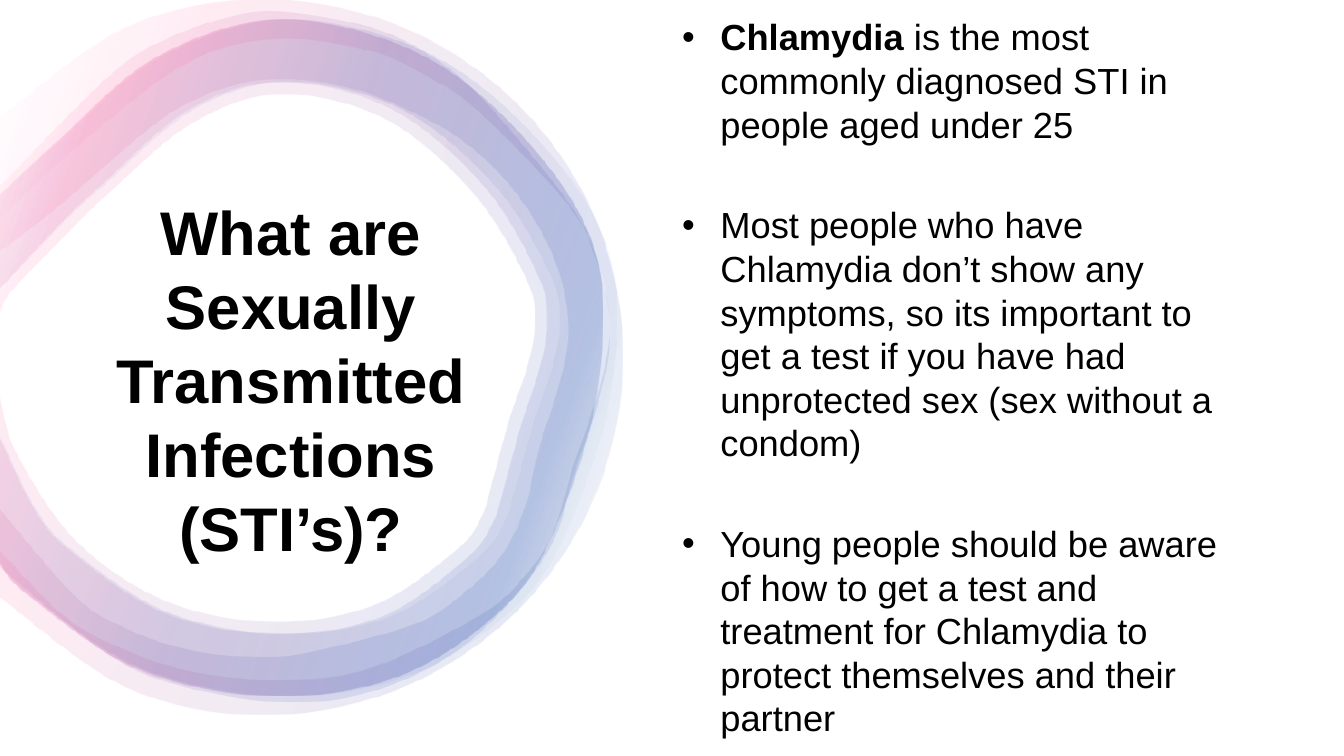
from dataclasses import dataclass
from lxml.etree import SubElement
from pptx import Presentation
from pptx.dml.color import RGBColor
from pptx.enum.text import MSO_ANCHOR, MSO_AUTO_SIZE, PP_ALIGN
from pptx.oxml import parse_xml
from pptx.oxml.ns import nsdecls, qn
from pptx.util import Inches, Pt


@dataclass(frozen=True)
class Theme:
    font: str = "Arial"
    ink: str = "000000"
    paper: str = "FFFFFF"
    blue: str = "00349E"
    pink: str = "FF388C"
    alpha: int = 10
    tilt: int = 200
    head: float = 44
    head_line: float = 52.9
    text: float = 25.9
    text_line: float = 31.1
    gap: float = 41


THEME = Theme()
WIDTH, HEIGHT = 13.33, 7.5

# Boxes as shares of the slide: left, top, width, height
RING_BOX = (0, 0, 0.463, 0.945)
TITLE_BOX = (0.066, 0.3, 0.301, 0.403)
BODY_BOX = (0.5, 0.117, 0.435, 0.763)

TITLE = "What are Sexually Transmitted Infections (STI’s)?"
# Each point: bold lead, then the rest
POINTS = [
    ("Chlamydia", " is the most commonly diagnosed STI in people aged under 25"),
    ("", "Most people who have Chlamydia don’t show any symptoms, so its important "
         "to get a test if you have had unprotected sex (sex without a condom)"),
    ("", "Young people should be aware of how to get a test and treatment for "
         "Chlamydia to protect themselves and their partner"),
]

# Knots of the ring's edges, on a design area of RING_W by RING_H.
# Outer edges run clockwise from the left side, inner edges run back.
RING_W, RING_H = 6.17, 7.09
WAVE_OUT = [
    (0, 1.85), (1.08, .76), (1.65, .39), (2.33, .16), (2.87, .13), (3.72, .29),
    (4.33, .6), (4.83, 1.04), (5.65, 2.04), (5.93, 2.64), (6.04, 3.3),
    (5.93, 3.97), (5.69, 4.68), (5.48, 5.36), (5.04, 5.98), (4.42, 6.52),
    (3.65, 6.86), (2.83, 6.96), (1.85, 6.81), (1.1, 6.5), (0, 5.62)]
WAVE_IN = [
    (0, 5.04), (.75, 5.91), (1.24, 6.22), (1.8, 6.42), (2.38, 6.5),
    (2.96, 6.48), (4.06, 6.2), (4.55, 5.91), (4.96, 5.51), (5.2, 5.02),
    (5.34, 4.43), (5.53, 3.83), (5.63, 3.3), (5.55, 2.75), (5.32, 2.23),
    (4.98, 1.76), (4.54, 1.37), (4.03, 1.09), (3.52, .89), (2.98, .8),
    (2.45, .82), (1.96, .98), (1.49, 1.27), (.57, 2.06), (0, 2.5)]
BEAN_OUT = [
    (0, 1.93), (.58, 1.4), (1.59, .56), (2.85, .19), (4.27, .54), (5.37, 1.43),
    (6.04, 2.53), (6.05, 3.87), (5.66, 5.15), (5.14, 5.98), (4.09, 6.68),
    (2.78, 6.9), (1.4, 6.63), (.28, 5.89), (0, 5.58)]
BEAN_IN = [
    (0, 4.33), (.35, 5.04), (.72, 5.46), (1.66, 6.07), (2.78, 6.28),
    (3.86, 6.11), (4.7, 5.55), (4.99, 5.18), (5.13, 4.73), (5.28, 4.2),
    (5.46, 3.66), (5.54, 3.21), (5.45, 2.73), (4.9, 1.84), (3.97, 1.08),
    (2.85, .81), (1.92, 1.08), (1.02, 1.84), (.63, 2.2), (0, 2.86)]
SLIM_IN = [
    (0, 3.9), (.17, 4.49), (.77, 5.37), (1.66, 5.96), (2.71, 6.16),
    (3.71, 5.99), (4.5, 5.46), (4.76, 5.13), (4.89, 4.7), (5.04, 4.15),
    (5.22, 3.62), (5.29, 3.2), (5.21, 2.77), (4.69, 1.92), (3.82, 1.18),
    (2.78, .93), (1.9, 1.22), (1.07, 1.92), (.69, 2.29), (.12, 2.88), (0, 3.12)]
DISC_OUT = [
    (0, 1.17), (1.26, .27), (2.62, 0), (3.98, .27), (5.13, 1.04), (5.9, 2.18),
    (6.17, 3.54), (5.9, 4.9), (5.13, 6.05), (3.98, 6.82), (2.62, 7.09),
    (1.26, 6.82), (0, 5.92)]
DISC_IN = [
    (0, 5.46), (.64, 6.11), (1.19, 6.42), (1.86, 6.65), (2.72, 6.74),
    (3.65, 6.63), (4.77, 6.09), (5.23, 5.67), (5.48, 5.27), (5.67, 4.64),
    (5.93, 3.86), (6.04, 3.23), (5.91, 2.6), (5.62, 2.03), (4.74, 1.11),
    (4.23, .76), (3.67, .51), (2.76, .39), (1.89, .61), (.89, 1.35), (0, 2.17)]


def squeeze(knots):
    return [(x * 0.977, y) for x, y in knots]


def fade(pink):
    """Stops from white over blue and pink to white."""
    return [(2, THEME.paper), (16, THEME.blue), (pink, THEME.pink), (100, THEME.paper)]


BANDS = [
    (WAVE_OUT, WAVE_IN, [(37, THEME.blue), (85, THEME.pink), (100, THEME.paper)]),
    (BEAN_OUT, BEAN_IN, [(2, THEME.paper), (54, THEME.blue), (100, THEME.paper)]),
    (squeeze(BEAN_OUT), SLIM_IN, fade(85)),
    (squeeze(BEAN_OUT), squeeze(BEAN_IN), fade(85)),
    (DISC_OUT, DISC_IN, fade(74)),
]


def frame(box):
    left, top, wide, high = box
    return (Inches(left * WIDTH), Inches(top * HEIGHT),
            Inches(wide * WIDTH), Inches(high * HEIGHT))


def bend(shape, edges):
    """Turn the straight steps along each edge into smooth curves."""
    steps = iter(list(shape._element.iter(qn("a:lnTo"))))
    for turn, knots in enumerate(edges):
        if turn:
            next(steps)  # straight join between the edges
        ends = [knots[0], *knots, knots[-1]]
        for a, b, c, d in zip(ends, ends[1:], ends[2:], ends[3:]):
            step = next(steps)
            step.tag = qn("a:cubicBezTo")
            pulls = [[q + (r - p) / 6 for p, q, r in zip(a, b, c)],
                     [r - (s - q) / 6 for q, r, s in zip(b, c, d)]]
            for i, (x, y) in enumerate(pulls):
                x, y = round(x - shape.left), round(y - shape.top)
                step.insert(i, parse_xml(f'<a:pt {nsdecls("a")} x="{x}" y="{y}"/>'))


def tint(shape, stops):
    """Fill a shape with a see-through linear gradient."""
    marks = "".join(
        f'<a:gs pos="{pos * 1000}"><a:srgbClr val="{color}">'
        f'<a:alpha val="{THEME.alpha * 1000}"/></a:srgbClr></a:gs>'
        for pos, color in stops)
    grad = parse_xml(
        f'<a:gradFill {nsdecls("a")} rotWithShape="1"><a:gsLst>{marks}</a:gsLst>'
        f'<a:lin ang="{THEME.tilt * 60000}" scaled="0"/></a:gradFill>')
    shape._element.spPr.find(qn("a:custGeom")).addnext(grad)


def draw_ring(slide, box):
    left, top, wide, high = frame(box)
    for outer, inner, stops in BANDS:
        edges = [[(left + x * wide / RING_W, top + y * high / RING_H)
                  for x, y in knots] for knots in (outer, inner)]
        first, *rest = edges[0] + edges[1]
        pen = slide.shapes.build_freeform(*first)
        pen.add_line_segments(rest, close=True)
        band = pen.convert_to_shape()
        bend(band, edges)
        band.shadow.inherit = False
        band.line.fill.background()
        tint(band, stops)


def place(holder, box):
    holder.left, holder.top, holder.width, holder.height = frame(box)
    text = holder.text_frame
    text.word_wrap = True
    text.auto_size = MSO_AUTO_SIZE.NONE
    text.vertical_anchor = MSO_ANCHOR.MIDDLE
    return text


def style(para, size, line):
    para.font.name = THEME.font
    para.font.size = Pt(size)
    para.font.color.rgb = RGBColor.from_string(THEME.ink)
    para.line_spacing = Pt(line)


def fill_title(slide, box):
    para = place(slide.shapes.title, box).paragraphs[0]
    para.text = TITLE
    para.alignment = PP_ALIGN.CENTER
    style(para, THEME.head, THEME.head_line)
    para.font.bold = True


def fill_body(slide, box):
    text = place(slide.placeholders[1], box)
    for i, (lead, rest) in enumerate(POINTS):
        para = text.add_paragraph() if i else text.paragraphs[0]
        if lead:
            run = para.add_run()
            run.text, run.font.bold = lead, True
        para.add_run().text = rest
        style(para, THEME.text, THEME.text_line)
        para.space_before = Pt(THEME.gap if i else 5)
        # Hanging bullet
        props = para._p.get_or_add_pPr()
        props.set("marL", str(Inches(0.38)))
        props.set("indent", str(-Inches(0.38)))
        mark = SubElement(props, qn("a:buChar"), char="•")
        props.find(qn("a:defRPr")).addprevious(mark)


def main():
    deck = Presentation()
    deck.slide_width, deck.slide_height = Inches(WIDTH), Inches(HEIGHT)
    slide = deck.slides.add_slide(deck.slide_layouts[1])
    slide.background.fill.solid()
    slide.background.fill.fore_color.rgb = RGBColor.from_string(THEME.paper)
    draw_ring(slide, RING_BOX)
    fill_title(slide, TITLE_BOX)
    fill_body(slide, BODY_BOX)
    # Text stays in front of the ring
    tree = slide.shapes._spTree
    for holder in list(slide.placeholders):
        tree.append(holder._element)
    deck.save("out.pptx")


if __name__ == "__main__":
    main()
